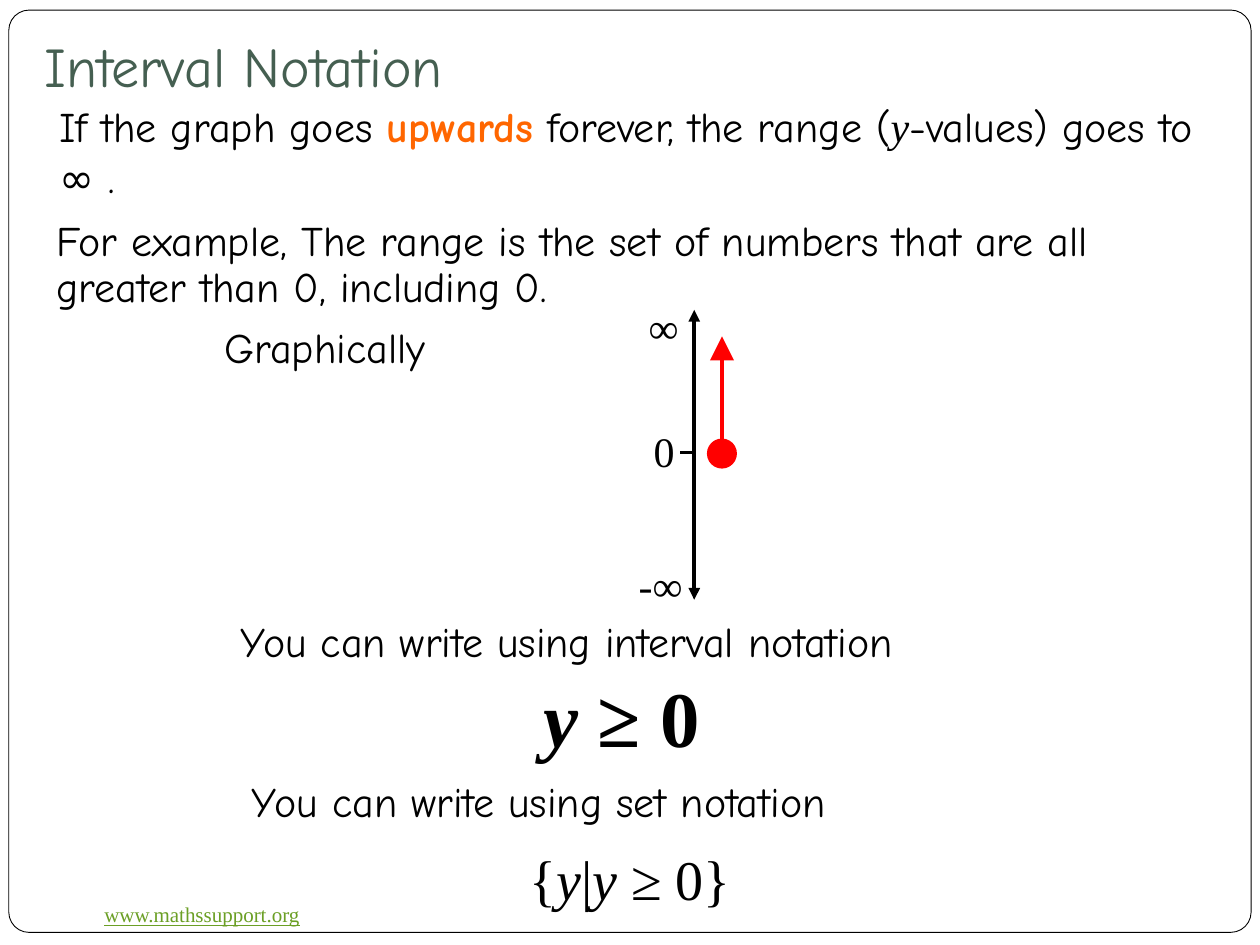
from dataclasses import dataclass
from typing import Optional

from lxml.etree import SubElement
from pptx import Presentation
from pptx.dml.color import RGBColor
from pptx.enum.shapes import MSO_CONNECTOR, MSO_SHAPE
from pptx.enum.text import MSO_ANCHOR, MSO_AUTO_SIZE, PP_ALIGN
from pptx.oxml.ns import qn
from pptx.util import Inches, Pt

BLACK = RGBColor(0x00, 0x00, 0x00)
WHITE = RGBColor(0xFF, 0xFF, 0xFF)
RED = RGBColor(0xFF, 0x00, 0x00)
ORANGE = RGBColor(0xFF, 0x66, 0x00)
TITLE_GREEN = RGBColor(0x45, 0x5F, 0x51)
LINK_GREEN = RGBColor(0x6B, 0x9F, 0x25)
COMIC = "Comic Neue"
TIMES = "Times New Roman"
WIDE_INSETS = (0.1, 0.05, 0.1, 0.05)
NARROW_INSETS = (0.08, 0.04, 0.08, 0.04)


@dataclass(frozen=True)
class Span:
    text: str
    font: str = COMIC
    size: float = 24
    color: RGBColor = BLACK
    bold: bool = False
    italic: bool = False
    underline: bool = False


@dataclass(frozen=True)
class Label:
    box: tuple[float, float, float, float]
    spans: tuple[Span, ...]
    insets: tuple[float, float, float, float] = NARROW_INSETS
    line_spacing: Optional[float] = 0.9
    wrap: bool = True
    anchor: MSO_ANCHOR = MSO_ANCHOR.TOP


@dataclass(frozen=True)
class Stroke:
    start: tuple[float, float]
    end: tuple[float, float]
    color: RGBColor
    width: float
    head: bool = False
    tail: bool = False
    arrow_size: str = "med"


def math(text: str, size: float = 24, bold: bool = False, italic: bool = False) -> Span:
    return Span(text, TIMES, size, bold=bold, italic=italic)


def plain_label(left: float, top: float, width: float, height: float, span: Span,
                wrap: bool = False) -> Label:
    return Label((left, top, width, height), (span,), WIDE_INSETS, None, wrap)


def fill_text(holder, label: Label) -> None:
    frame = holder.text_frame
    frame.auto_size = MSO_AUTO_SIZE.NONE
    frame.word_wrap = label.wrap
    frame.vertical_anchor = label.anchor
    (frame.margin_left, frame.margin_top,
     frame.margin_right, frame.margin_bottom) = map(Inches, label.insets)
    paragraph = frame.paragraphs[0]
    paragraph.alignment = PP_ALIGN.LEFT
    paragraph.space_before = Pt(0)
    if label.line_spacing:
        paragraph.line_spacing = label.line_spacing
    for span in label.spans:
        run = paragraph.add_run()
        run.text = span.text
        font = run.font
        font.name, font.size = span.font, Pt(span.size)
        font.bold, font.italic, font.underline = span.bold, span.italic, span.underline
        font.color.rgb = span.color


def add_label(shapes, label: Label) -> None:
    fill_text(shapes.add_textbox(*map(Inches, label.box)), label)


def fill_placeholder(placeholder, label: Label) -> None:
    (placeholder.left, placeholder.top,
     placeholder.width, placeholder.height) = map(Inches, label.box)
    fill_text(placeholder, label)


def add_stroke(shapes, stroke: Stroke) -> None:
    connector = shapes.add_connector(
        MSO_CONNECTOR.STRAIGHT, *map(Inches, stroke.start + stroke.end))
    connector.line.color.rgb = stroke.color
    connector.line.width = Pt(stroke.width)
    properties = connector._element.spPr
    outline = properties.find(qn("a:ln"))
    for tag, shown in (("a:headEnd", stroke.head), ("a:tailEnd", stroke.tail)):
        if shown:
            SubElement(outline, qn(tag), type="triangle",
                       w=stroke.arrow_size, len=stroke.arrow_size)
    SubElement(properties, qn("a:effectLst"))


def add_solid(shapes, preset: MSO_SHAPE, box: tuple[float, float, float, float],
              fill: RGBColor, line: RGBColor, line_width: float):
    solid = shapes.add_shape(preset, *map(Inches, box))
    solid.shadow.inherit = False
    solid.fill.solid()
    solid.fill.fore_color.rgb = fill
    solid.line.color.rgb = line
    solid.line.width = Pt(line_width)
    return solid


TITLE = Label((0.25, 0.31, 8, 0.57),
              (Span("Interval Notation", size=32, color=TITLE_GREEN),),
              (0.1, 0.05, 0.1, 0.1), None, anchor=MSO_ANCHOR.BOTTOM)
RULE = Label((0.37, 0.75, 9.38, 0.68), (
    Span("If the graph goes "),
    Span("upwards", color=ORANGE, bold=True),
    Span(" forever, the range ("),
    math("y", italic=True),
    Span("-values) goes to ∞ ."),
), WIDE_INSETS, None)
WEB_ADDRESS = plain_label(0.73, 7.11, 1.77, 0.3, Span(
    "www.mathssupport.org", TIMES, 12, LINK_GREEN, underline=True))
EXPLANATIONS = (
    Label((1.83, 4.89, 6.92, 0.53), (Span("You can write using interval notation"),)),
    Label((1.92, 6.16, 5.2, 0.53), (Span("You can write using set notation"),)),
    Label((4.23, 5.35, 2.01, 0.53),
          (math("y ", 45, True, True), math("≥ 0", 45, True))),
    Label((0.37, 1.71, 9.13, 0.8), (Span(
        "For example, The range is the set of numbers that are all "
        "greater than 0, including 0."),)),
    Label((4.12, 6.72, 2.09, 0.56), (
        math("{", 32), math("y", 32, italic=True), math("|", 32),
        math("y ", 32, italic=True), math("≥ 0}", 32),
    ), anchor=MSO_ANCHOR.MIDDLE),
    Label((1.7, 2.56, 2.02, 0.53), (Span("Graphically"),)),
)
RANGE_ARROW = Stroke((5.73, 3.53), (5.73, 2.67), RED, 2.75, tail=True, arrow_size="lg")
AXIS = Stroke((5.51, 4.76), (5.51, 2.46), BLACK, 2.25, head=True, tail=True)
ZERO_TICK = Stroke((5.4, 3.59), (5.5, 3.59), BLACK, 1.75)
ZERO = plain_label(5.09, 3.33, 0.4, 0.5, math("0"), wrap=True)
AXIS_ENDS = (
    plain_label(4.97, 4.39, 0.55, 0.5, math("-∞")),
    plain_label(5.05, 2.34, 0.44, 0.5, math("∞")),
)


def main() -> None:
    presentation = Presentation()
    presentation.slide_width, presentation.slide_height = Inches(10), Inches(7.5)
    slide = presentation.slides.add_slide(presentation.slide_layouts[1])
    shapes = slide.shapes
    title, rule = shapes.title, slide.placeholders[1]

    border = add_solid(shapes, MSO_SHAPE.ROUNDED_RECTANGLE,
                       (0.07, 0.08, 9.86, 7.32), WHITE, BLACK, 0.5)
    border.adjustments[0] = 0.022
    title._element.addprevious(border._element)
    add_label(shapes, WEB_ADDRESS)

    fill_placeholder(title, TITLE)
    rule_properties = rule.text_frame.paragraphs[0]._p.get_or_add_pPr()
    rule_properties.set("marL", "0")
    rule_properties.set("indent", "0")
    SubElement(rule_properties, qn("a:buNone"))
    fill_placeholder(rule, RULE)

    for explanation in EXPLANATIONS:
        add_label(shapes, explanation)

    add_stroke(shapes, RANGE_ARROW)
    number_line = shapes.add_group_shape().shapes
    add_stroke(number_line, AXIS)
    add_label(number_line, ZERO)
    add_stroke(number_line, ZERO_TICK)
    add_solid(shapes, MSO_SHAPE.OVAL, (5.63, 3.5, 0.2, 0.2), RED, RED, 2.75)
    for axis_end in AXIS_ENDS:
        add_label(shapes, axis_end)

    presentation.save("out.pptx")


if __name__ == "__main__":
    main()
